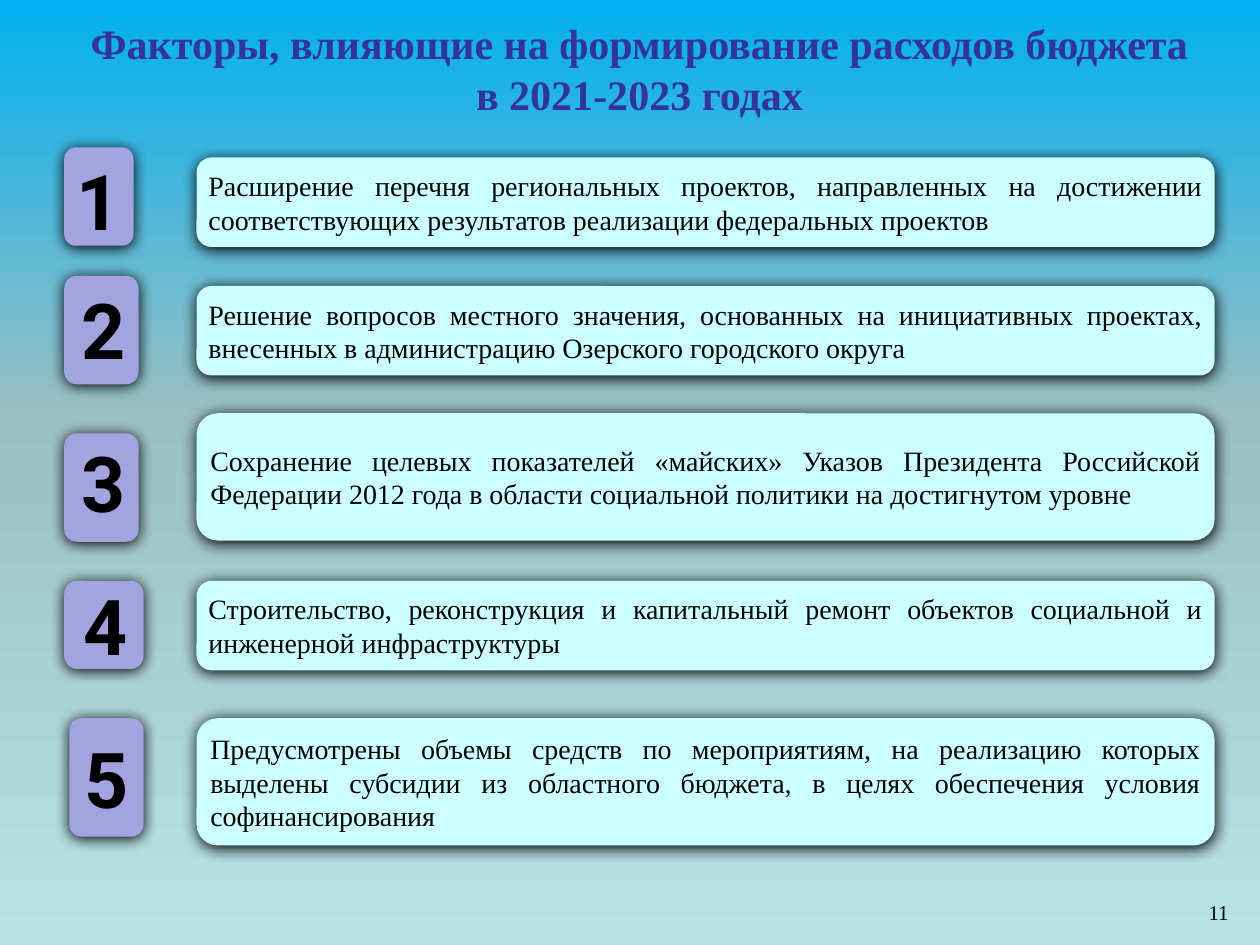
from copy import deepcopy
from dataclasses import dataclass

from lxml.etree import SubElement
from pptx import Presentation
from pptx.dml.color import RGBColor
from pptx.enum.shapes import MSO_SHAPE
from pptx.enum.text import MSO_ANCHOR, PP_ALIGN
from pptx.oxml.ns import qn
from pptx.util import Inches, Pt


@dataclass(frozen=True)
class Theme:
    """Colours, fonts and type sizes of the slide."""
    sky: tuple = ((0, "00B0F0"), (0.44, "9BBFC2"), (1, "B8E3E6"))
    title: str = "333399"
    text: str = "000000"
    badge: str = "A3A3E0"
    card: str = "CCFFFF"
    serif: str = "Times New Roman"
    sans: str = "Roboto"
    title_size: int = 24
    number_size: int = 44
    body_size: int = 16
    page_size: int = 12


class Deck:
    """Holds the theme and the current slide and draws each kind of element."""

    def __init__(self, prs, theme):
        self.theme = theme
        self.s = prs.slides.add_slide(prs.slide_layouts[5])

    def background(self):
        """Fill the slide with a vertical three-stop gradient."""
        fill = self.s.background.fill
        fill.gradient()
        fill.gradient_angle = 270
        gs = self.s._element.find(".//" + qn("a:gsLst"))
        gs.insert(1, deepcopy(gs[0]))
        for stop, (pos, color) in zip(fill.gradient_stops, self.theme.sky):
            stop.position = pos
            stop.color.rgb = RGBColor.from_string(color)

    def set_text(self, sp, text, size, font, align, color=None, bold=False,
                 anchor=MSO_ANCHOR.TOP, inset=0.06, wrap=True):
        """Put one formatted paragraph into a shape."""
        tf = sp.text_frame
        frame = {"word_wrap": wrap, "vertical_anchor": anchor,
                 "margin_left": Inches(inset), "margin_right": Inches(inset),
                 "margin_top": Inches(0.05), "margin_bottom": Inches(0.05)}
        for name, value in frame.items():
            setattr(tf, name, value)
        p = tf.paragraphs[0]
        p.alignment = align
        r = p.add_run()
        r.text = text
        for name, value in {"size": Pt(size), "name": font, "bold": bold}.items():
            setattr(r.font, name, value)
        r.font.color.rgb = RGBColor.from_string(color or self.theme.text)

    def title(self, text, box):
        """Place and format the title placeholder."""
        sp = self.s.shapes.title
        for name, value in zip(("left", "top", "width", "height"), box):
            setattr(sp, name, Inches(value))
        self.set_text(sp, text, self.theme.title_size, self.theme.serif, PP_ALIGN.CENTER,
                      self.theme.title, True, MSO_ANCHOR.MIDDLE, 0.1)

    def panel(self, box, color):
        """Draw a rounded rectangle with a soft shadow."""
        sp = self.s.shapes.add_shape(MSO_SHAPE.ROUNDED_RECTANGLE, *map(Inches, box))
        sp.fill.solid()
        sp.fill.fore_color.rgb = RGBColor.from_string(color)
        sp.line.fill.background()
        sp.shadow.inherit = False
        effects = sp._element.spPr.find(qn("a:effectLst"))
        shadow = SubElement(effects, qn("a:outerShdw"), blurRad=str(Pt(8.5)),
                            dist=str(Pt(1)), dir="5400000", algn="ctr", rotWithShape="0")
        SubElement(shadow, qn("a:srgbClr"), val="000000")
        return sp

    def textbox(self, box, *args, **kwargs):
        """Add a free text box."""
        self.set_text(self.s.shapes.add_textbox(*map(Inches, box)), *args, **kwargs)

    def badge(self, number, box, label, align):
        """Draw a numbered badge, with the number inside or in its own box."""
        sp = self.panel(box, self.theme.badge)
        style = number, self.theme.number_size, self.theme.sans, align
        if label:
            self.textbox(label, *style, bold=True)
        else:
            self.set_text(sp, *style, bold=True, anchor=MSO_ANCHOR.MIDDLE, wrap=False)

    def card(self, text, top, height):
        """Draw a card with a justified statement."""
        sp = self.panel((1.56, top, 8.08, height), self.theme.card)
        self.set_text(sp, text, self.theme.body_size, self.theme.serif, PP_ALIGN.JUSTIFY,
                      anchor=MSO_ANCHOR.MIDDLE)

    def page_number(self, text, box):
        """Add the page number."""
        self.textbox(box, text, self.theme.page_size, self.theme.serif,
                     PP_ALIGN.RIGHT, inset=0.1)


FACTORS = [
    ((0.51, 1.17, 0.55, 0.78), (0.55, 1.17, 0.39, 0.84), PP_ALIGN.LEFT, 1.25, 0.71,
     "Расширение перечня региональных проектов, направленных на достижении "
     "соответствующих результатов реализации федеральных проектов"),
    ((0.51, 2.19, 0.59, 0.86), (0.59, 2.19, 0.45, 0.84), PP_ALIGN.CENTER, 2.27, 0.71,
     "Решение вопросов местного значения, основанных на инициативных проектах, "
     "внесенных в администрацию Озерского городского округа"),
    ((0.51, 3.44, 0.59, 0.86), (0.56, 3.41, 0.52, 0.84), PP_ALIGN.CENTER, 3.28, 1.01,
     "Сохранение целевых показателей «майских» Указов Президента "
     "Российской Федерации 2012 года в области социальной политики "
     "на достигнутом уровне"),
    ((0.51, 4.61, 0.63, 0.7), (0.58, 4.54, 0.52, 0.84), PP_ALIGN.CENTER, 4.61, 0.71,
     "Строительство, реконструкция и капитальный ремонт объектов социальной "
     "и инженерной инфраструктуры"),
    ((0.55, 5.7, 0.59, 0.94), None, PP_ALIGN.CENTER, 5.7, 1.01,
     "Предусмотрены объемы средств по мероприятиям, на реализацию которых "
     "выделены субсидии из областного бюджета, в целях обеспечения условия "
     "софинансирования"),
]


def main():
    """Build the slide and save it."""
    prs = Presentation()
    prs.slide_width, prs.slide_height = Inches(10), Inches(7.5)
    deck = Deck(prs, Theme())
    deck.background()
    deck.title("Факторы, влияющие на формирование расходов бюджета в 2021-2023 годах",
               (0.51, 0.06, 9.13, 0.96))
    for number, (box, label, align, top, height, text) in enumerate(FACTORS, 1):
        deck.badge(str(number), box, label, align)
        deck.card(text, top, height)
    deck.page_number("11", (9.44, 7.09, 0.41, 0.39))
    prs.save("out.pptx")


if __name__ == "__main__":
    main()
